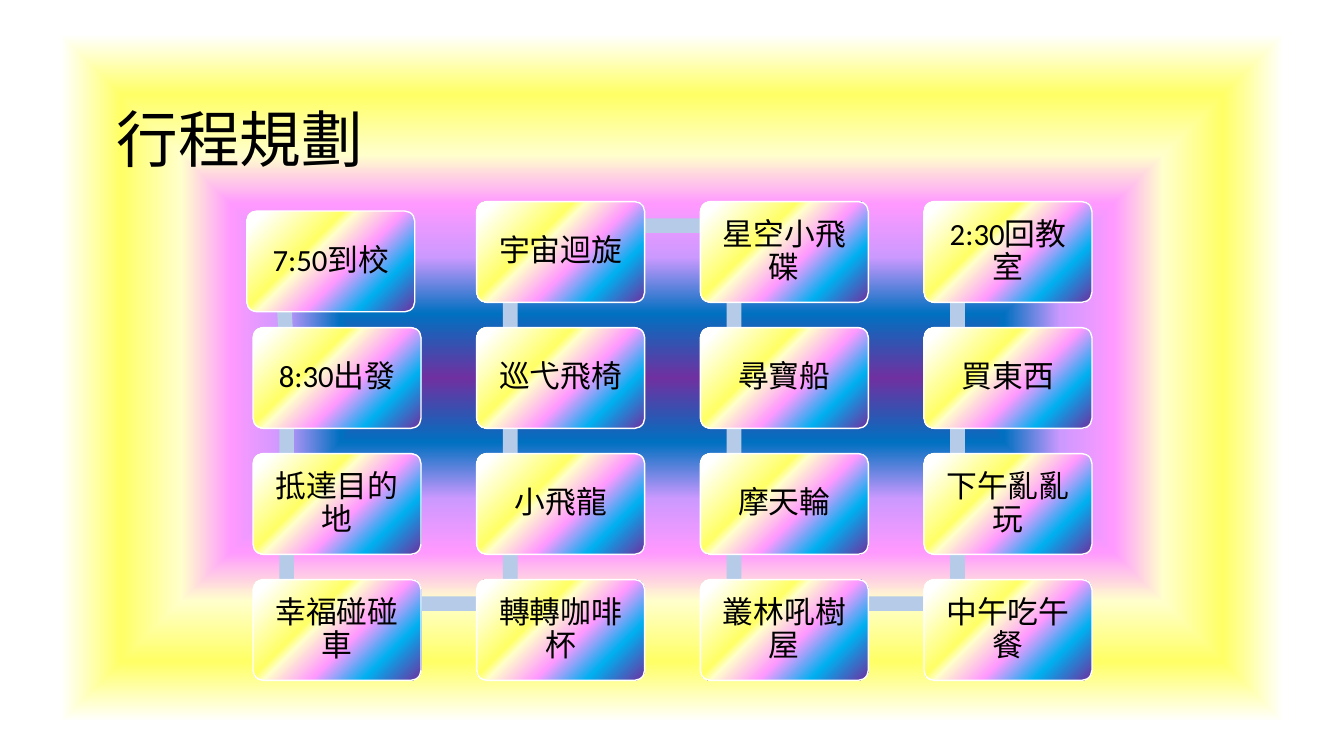
from math import atan2, degrees, hypot

from lxml.etree import SubElement
from pptx import Presentation
from pptx.dml.color import RGBColor
from pptx.enum.shapes import MSO_SHAPE
from pptx.enum.text import MSO_ANCHOR, PP_ALIGN
from pptx.oxml import parse_xml
from pptx.oxml.ns import nsdecls, qn
from pptx.util import Pt

PX = 9525
SLIDE_WIDTH, SLIDE_HEIGHT = 1280, 720
FONT = "Calibri"
COLORS = {
    "purple": "7030A0", "blue": "0070C0", "sky": "00B0F0", "lilac": "CC99FF",
    "pink": "FF99FF", "cream": "FFFFCC", "yellow": "FFFF66", "white": "FFFFFF",
    "track": "B5CBE7", "ink": "000000",
}
BACKDROP_STOPS = [(0, "purple"), (17, "blue"), (32, "lilac"), (46, "pink"),
                  (59, "cream"), (75, "yellow"), (91, "white")]
CARD_STOPS = [(0, "purple"), (22, "sky"), (41, "pink"),
              (59, "cream"), (64, "yellow"), (93, "white")]

ITINERARY = [
    "7:50到校", "8:30出發", "抵達目的地", "幸福碰碰車",
    "轉轉咖啡杯", "小飛龍", "巡弋飛椅", "宇宙迴旋",
    "星空小飛碟", "尋寶船", "摩天輪", "叢林吼樹屋",
    "中午吃午餐", "下午亂亂玩", "買東西", "2:30回教室",
]
ROWS = 4
GRID_LEFT, GRID_TOP = 241, 192
COLUMN_PITCH, ROW_PITCH = 213, 120
CARD_WIDTH, CARD_HEIGHT = 160, 96
FIRST_CARD = (235, 201)
TRACK_OFFSET = (32, 23)
TRACK_THICKNESS = 14


def rgb(color):
    return RGBColor.from_string(COLORS[color])


def replace_solid_fill(properties, stops, angle=None):
    """Swap a solid fill for a gradient: linear at angle, or rectangular from the centre."""
    gradient = parse_xml(f'<a:gradFill {nsdecls("a")} rotWithShape="1"><a:gsLst/></a:gradFill>')
    for position, color in stops:
        stop = SubElement(gradient[0], qn("a:gs"), pos=str(position * 1000))
        SubElement(stop, qn("a:srgbClr"), val=COLORS[color])
    if angle is None:
        shading = SubElement(gradient, qn("a:path"), {"path": "shape"})
        SubElement(shading, qn("a:fillToRect"), dict.fromkeys("ltrb", "50000"))
    else:
        SubElement(gradient, qn("a:lin"), ang=str(angle * 60000), scaled="0")
    properties.replace(properties.find(qn("a:solidFill")), gradient)


class Itinerary:
    def __init__(self, slide):
        self.slide = slide

    def backdrop(self):
        self.slide.background.fill.solid()
        properties = self.slide.element.find(".//" + qn("p:bgPr"))
        replace_solid_fill(properties, BACKDROP_STOPS)

    def block(self, kind, left, top, width, height, color):
        block = self.slide.shapes.add_shape(
            kind, *(round(length * PX) for length in (left, top, width, height)))
        block.shadow.inherit = False
        block.fill.solid()
        block.fill.fore_color.rgb = rgb(color)
        block.line.fill.background()
        return block

    def label(self, frame, words, size, align, insets):
        """Fill a frame with one middle-anchored paragraph; insets are left, top, right, bottom."""
        frame.word_wrap = True
        frame.vertical_anchor = MSO_ANCHOR.MIDDLE
        (frame.margin_left, frame.margin_top,
         frame.margin_right, frame.margin_bottom) = (inset * PX for inset in insets)
        paragraph = frame.paragraphs[0]
        paragraph.alignment = align
        paragraph.line_spacing = 0.9
        run = paragraph.add_run()
        run.text = words
        run.font.name = FONT
        run.font.size = Pt(size)
        run.font.color.rgb = rgb("ink")

    def title(self, words):
        heading = self.slide.shapes.add_textbox(88 * PX, 38 * PX, 1104 * PX, 139 * PX)
        self.label(heading.text_frame, words, 44, PP_ALIGN.LEFT, (23, 62, 10, 5))

    def track(self, start, end):
        """Draw a bar between the track points of two cards."""
        run, rise = end[0] - start[0], end[1] - start[1]
        length = hypot(run, rise)
        middle_x = (start[0] + end[0]) / 2 + TRACK_OFFSET[0]
        middle_y = (start[1] + end[1]) / 2 + TRACK_OFFSET[1]
        bar = self.block(MSO_SHAPE.RECTANGLE, middle_x - length / 2,
                         middle_y - TRACK_THICKNESS / 2, length, TRACK_THICKNESS, "track")
        bar.rotation = round(degrees(atan2(rise, run)), 1)

    def card(self, corner, words):
        card = self.block(MSO_SHAPE.ROUNDED_RECTANGLE, *corner,
                          CARD_WIDTH, CARD_HEIGHT, "white")
        card.adjustments[0] = 0.1
        replace_solid_fill(card.element.spPr, CARD_STOPS, 225)
        card.line.color.rgb = rgb("white")
        card.line.width = Pt(1)
        self.label(card.text_frame, words, 22, PP_ALIGN.CENTER, (9, 9, 9, 9))


def card_corner(index):
    """Snake through the columns: down the first, up the next."""
    if index == 0:
        return FIRST_CARD
    column, row = divmod(index, ROWS)
    if column % 2:
        row = ROWS - 1 - row
    return GRID_LEFT + column * COLUMN_PITCH, GRID_TOP + row * ROW_PITCH


def main():
    presentation = Presentation()
    presentation.slide_width = SLIDE_WIDTH * PX
    presentation.slide_height = SLIDE_HEIGHT * PX
    plan = Itinerary(presentation.slides.add_slide(presentation.slide_layouts[6]))
    plan.backdrop()
    plan.title("行程規劃")
    for index, activity in enumerate(ITINERARY):
        corner = card_corner(index)
        if index + 1 < len(ITINERARY):
            plan.track(corner, card_corner(index + 1))
        plan.card(corner, activity)
    presentation.save("out.pptx")


if __name__ == "__main__":
    main()
